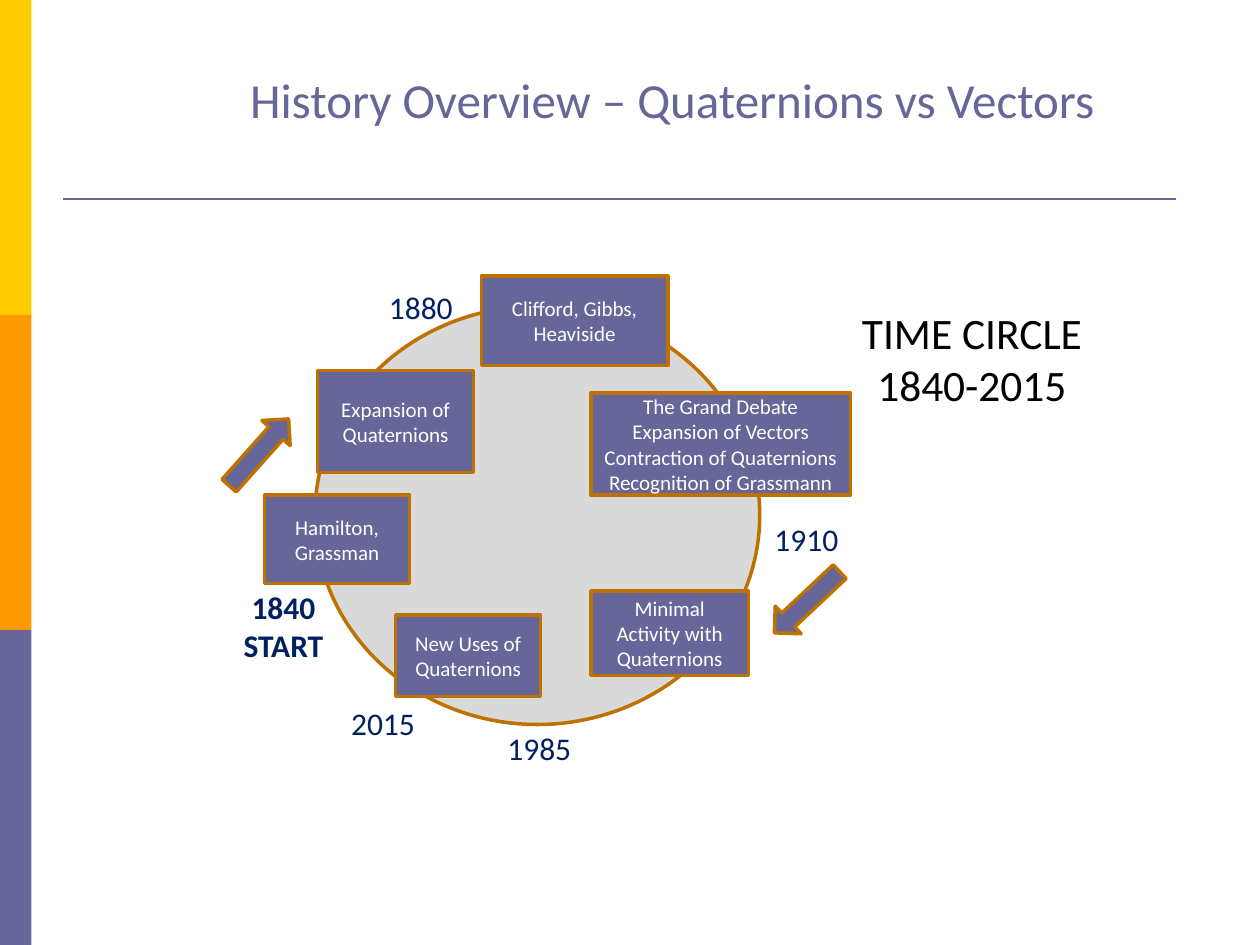
from dataclasses import dataclass

from pptx import Presentation
from pptx.dml.color import RGBColor as Color
from pptx.enum.shapes import MSO_CONNECTOR as Connector, MSO_SHAPE as Preset
from pptx.enum.text import MSO_ANCHOR as Anchor, PP_ALIGN as Align
from pptx.oxml.ns import qn
from pptx.util import Inches, Pt
from lxml.etree import SubElement

COLUMNS, ROWS = 100, 75


@dataclass(frozen=True)
class Theme:
    font: str = "Calibri"
    violet: str = "666699"
    yellow: str = "FFCC00"
    orange: str = "FF9900"
    outline: str = "BD7100"
    disc: str = "D9D9D9"
    navy: str = "002060"
    black: str = "000000"
    white: str = "FFFFFF"
    title_size: float = 28
    heading_size: float = 24.8
    label_size: float = 18
    box_size: float = 12
    rule_width: float = 1.5
    outline_width: float = 2


def apply_format(target, values):
    for name, value in values.items():
        setattr(target, name, value)


class SlideBuilder:
    """Places elements on a grid of COLUMNS by ROWS cells."""

    def __init__(self, presentation, theme):
        self.theme = theme
        self.column = presentation.slide_width / COLUMNS
        self.row = presentation.slide_height / ROWS
        self.slide = presentation.slides.add_slide(presentation.slide_layouts[6])

    def place(self, x, y):
        return round(x * self.column), round(y * self.row)

    def area(self, left, top, width, height):
        return *self.place(left, top), *self.place(width, height)

    def fill_text(self, shape, lines, size, color, bold=False, anchor=Anchor.MIDDLE):
        frame = shape.text_frame
        apply_format(frame, {"word_wrap": True, "vertical_anchor": anchor})
        frame.text = "\n".join(lines)
        for paragraph in frame.paragraphs:
            paragraph.alignment = Align.CENTER
            font = paragraph.runs[0].font
            apply_format(font, {"name": self.theme.font, "size": Pt(size), "bold": bold})
            font.color.rgb = Color.from_string(color)

    def text(self, area, lines, size, color, **options):
        box = self.slide.shapes.add_textbox(*self.area(*area))
        self.fill_text(box, lines, size, color, **options)
        return box

    def shape(self, preset, area, fill, outlined=True, rotation=0):
        shape = self.slide.shapes.add_shape(preset, *self.area(*area))
        shape.rotation = rotation
        shape.shadow.inherit = False
        shape.fill.solid()
        shape.fill.fore_color.rgb = Color.from_string(fill)
        if outlined:
            shape.line.color.rgb = Color.from_string(self.theme.outline)
            shape.line.width = Pt(self.theme.outline_width)
        else:
            shape.line.fill.background()
        return shape

    def event(self, area, *lines):
        box = self.shape(Preset.RECTANGLE, area, self.theme.violet)
        self.fill_text(box, lines, self.theme.box_size, self.theme.white)

    def year(self, area, *lines, bold=False):
        self.text(area, lines, self.theme.label_size, self.theme.navy, bold=bold)

    def arrow(self, left, top, rotation):
        self.shape(Preset.RIGHT_ARROW, (left, top, 7.1, 3), self.theme.violet, rotation=rotation)

    def rule(self, start, end):
        line = self.slide.shapes.add_connector(
            Connector.STRAIGHT, *self.place(*start), *self.place(*end))
        line.line.color.rgb = Color.from_string(self.theme.violet)
        line.line.width = Pt(self.theme.rule_width)
        SubElement(line._element.spPr, qn("a:effectLst"))

    def title(self, area, text, bottom_margin):
        box = self.text(area, [text], self.theme.title_size, self.theme.violet,
                        anchor=Anchor.BOTTOM)
        box.text_frame.margin_bottom = round(bottom_margin * self.row)


def main():
    presentation = Presentation()
    apply_format(presentation, {"slide_width": Inches(10), "slide_height": Inches(7.5)})
    theme = Theme()
    builder = SlideBuilder(presentation, theme)

    band_height = ROWS / 3
    for index, color in enumerate((theme.yellow, theme.orange, theme.violet)):
        band = (0, index * band_height, 2.5, band_height)
        builder.shape(Preset.RECTANGLE, band, color, outlined=False)
    builder.rule((5, 15.8), (93.3, 15.8))
    builder.title((17.5, 4.3, 71.7, 10.7), "History Overview – Quaternions vs Vectors", 4.8)

    builder.shape(Preset.OVAL, (25, 24.3, 35.3, 33.2), theme.disc)
    events = (
        ((25.2, 29.4, 12.4, 8.1), "Expansion of Quaternions"),
        ((21, 39.3, 11.5, 7), "Hamilton, Grassman"),
        ((38.2, 21.9, 14.8, 7.1), "Clifford, Gibbs, Heaviside"),
        ((46.9, 31.2, 20.6, 8.1), "The Grand Debate", "Expansion of Vectors",
         "Contraction of Quaternions", "Recognition of Grassmann"),
        ((31.4, 48.8, 11.5, 6.5), "New Uses of Quaternions"),
        ((46.9, 46.9, 12.5, 6.7), "Minimal Activity with Quaternions"),
    )
    for area, *lines in events:
        builder.event(area, *lines)

    years = (
        ("1880", 29.3, 21.6, 8.2),
        ("1910", 59.3, 40, 9.4),
        ("1985", 38.7, 56.6, 8.2),
        ("2015", 26.3, 54.6, 8.2),
    )
    for year, left, top, width in years:
        builder.year((left, top, width, 5.6), year)
    builder.year((17.5, 46.9, 10, 5.6), "1840", "START", bold=True)

    for left, top, rotation in ((17, 34.4, 311.7), (60.5, 46.3, 136.8)):
        builder.arrow(left, top, rotation)
    builder.text((67.4, 23.8, 19.5, 9.3), ["TIME CIRCLE", "1840-2015"],
                 theme.heading_size, theme.black, anchor=Anchor.TOP)

    presentation.save("out.pptx")


if __name__ == "__main__":
    main()
